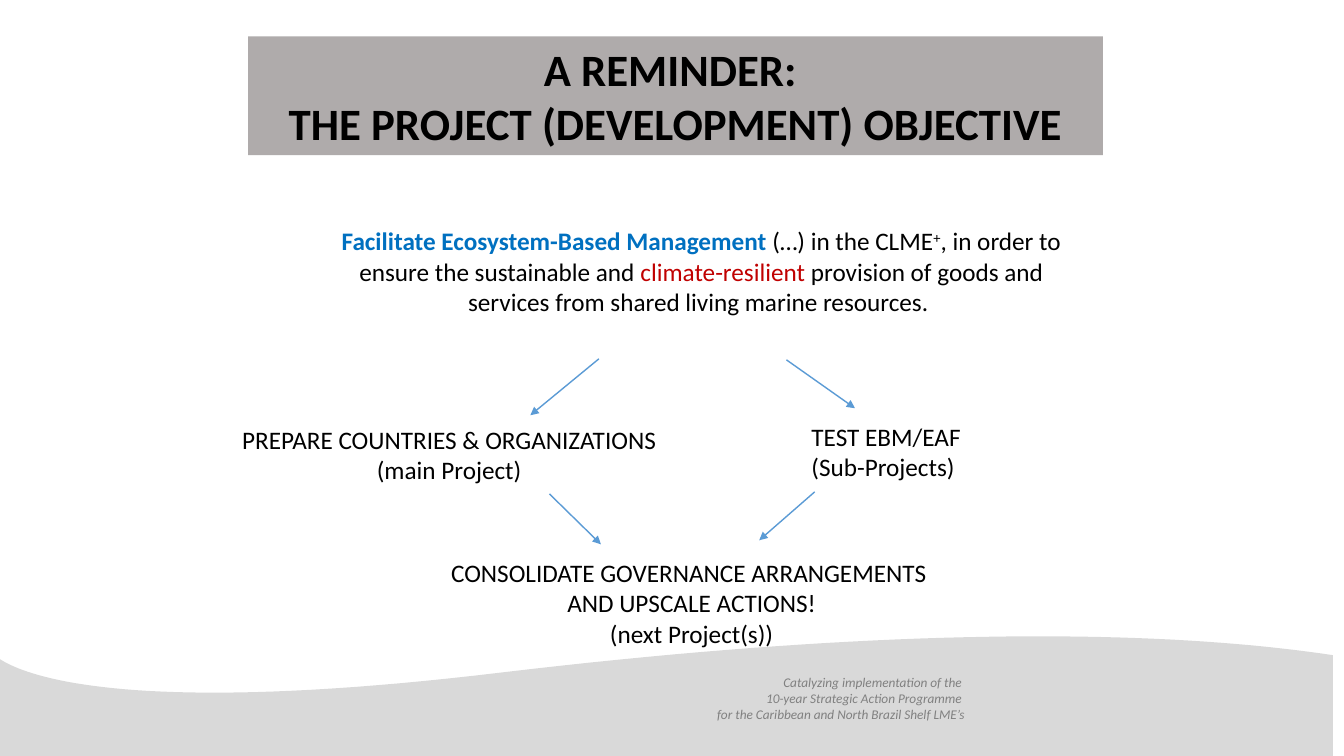
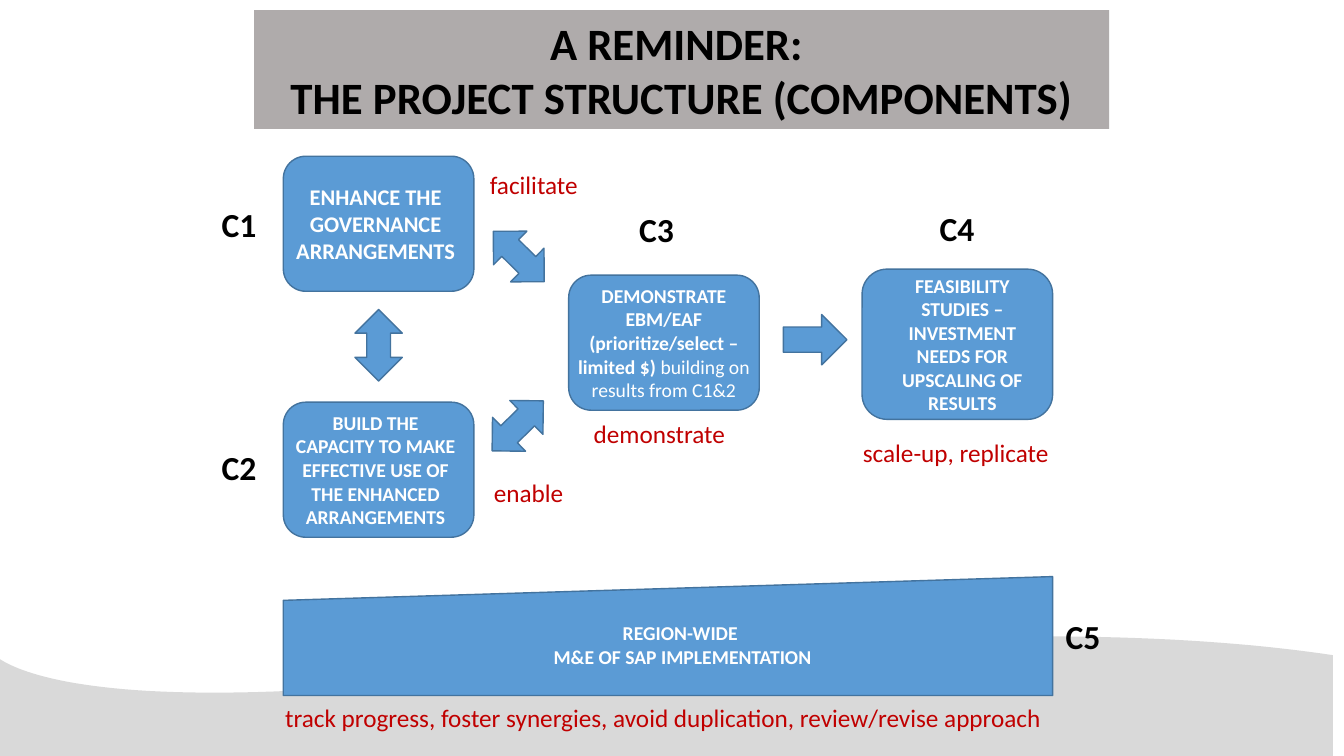
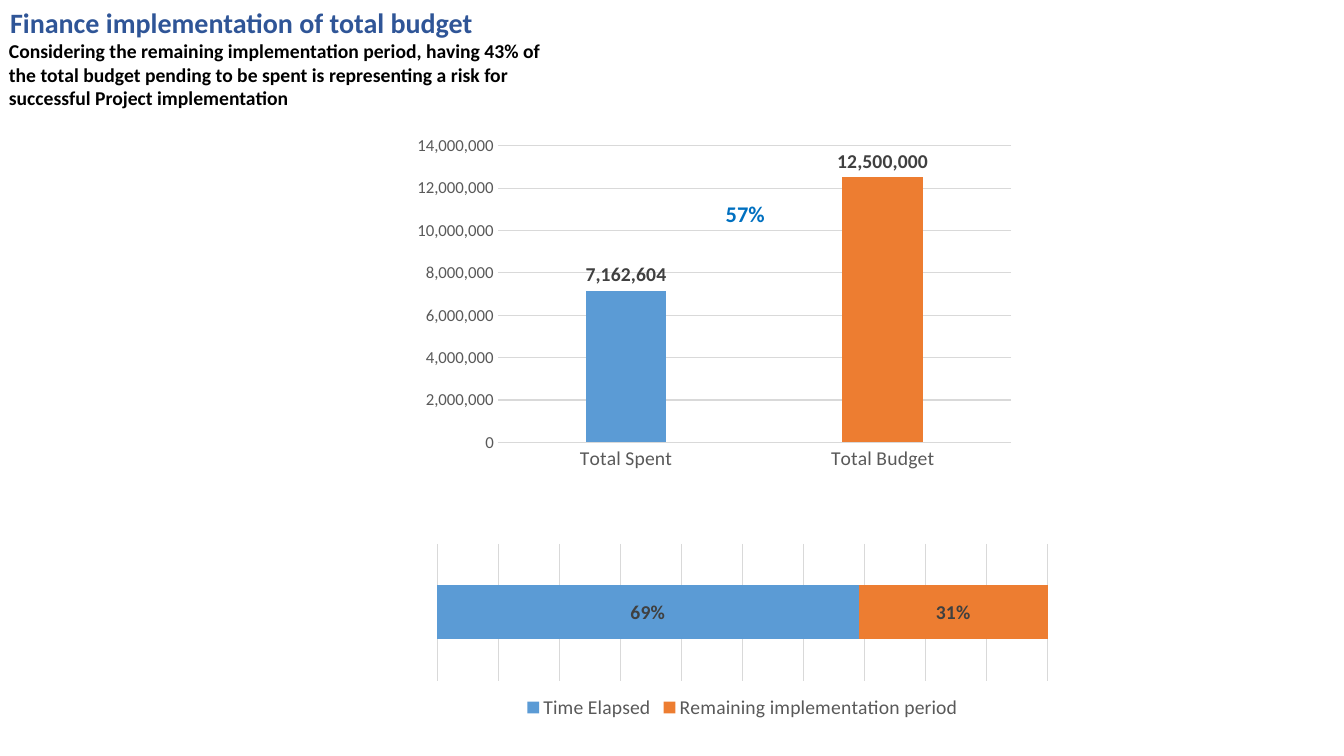
from dataclasses import dataclass

from lxml.etree import SubElement
from pptx import Presentation
from pptx.chart.data import CategoryChartData
from pptx.dml.color import RGBColor
from pptx.enum.chart import XL_CHART_TYPE, XL_LABEL_POSITION, XL_LEGEND_POSITION, XL_TICK_MARK
from pptx.enum.shapes import MSO_CONNECTOR, MSO_SHAPE
from pptx.enum.text import MSO_ANCHOR, MSO_AUTO_SIZE, PP_ALIGN
from pptx.oxml import parse_xml
from pptx.oxml.ns import nsdecls, qn
from pptx.util import Inches, Pt


@dataclass(frozen=True)
class Theme:
    font: str = "Calibri"
    black: str = "000000"
    white: str = "FFFFFF"
    band: str = "AFABAB"
    wave: str = "D9D9D9"
    blue: str = "5B9BD5"
    blue_edge: str = "43739E"
    orange: str = "ED7D31"
    accent: str = "0070C0"
    red: str = "C00000"
    navy: str = "2F5597"
    footer: str = "808080"
    axis: str = "595959"
    value: str = "404040"
    title_size: float = 32
    label_size: float = 24
    heading_size: float = 20
    body_size: float = 18
    large_size: float = 16
    small_size: float = 14
    axis_size: float = 12
    footer_size: float = 9.5


@dataclass(frozen=True)
class Box:
    x: float
    y: float
    w: float
    h: float

    def inner(self, x, y, w, h):
        """Return a box whose corner is measured from this one."""
        return Box(self.x + x, self.y + y, w, h)

    def emu(self):
        return [Inches(v) for v in (self.x, self.y, self.w, self.h)]


T = Theme()
CENTER, RIGHT = PP_ALIGN.CENTER, PP_ALIGN.RIGHT
TOP, MIDDLE = MSO_ANCHOR.TOP, MSO_ANCHOR.MIDDLE


def rgb(color):
    return RGBColor.from_string(color)


def set_font(font, size, color, bold=False, italic=False):
    font.name, font.size, font.bold, font.italic = T.font, Pt(size), bold, italic
    font.color.rgb = rgb(color)


def write(tf, paragraphs, size=T.body_size, color=T.black, bold=False, italic=False,
          align=None, anchor=TOP, wrap=True, insets=(0.1, 0.05, 0.1, 0.05)):
    """Fill a text frame; a paragraph is a string or a list of (text, format) runs."""
    tf.word_wrap, tf.auto_size, tf.vertical_anchor = wrap, MSO_AUTO_SIZE.NONE, anchor
    tf.margin_left, tf.margin_top, tf.margin_right, tf.margin_bottom = map(Inches, insets)
    for i, runs in enumerate(paragraphs):
        p = tf.paragraphs[0] if i == 0 else tf.add_paragraph()
        p.alignment = align
        for text, changes in [(runs, {})] if isinstance(runs, str) else runs:
            r = p.add_run()
            r.text = text
            set_font(r.font, size, changes.get("color", color), changes.get("bold", bold), italic)
            if changes.get("superscript"):
                r.font._element.set("baseline", "30000")


def add_text(slide, box, *paragraphs, **fmt):
    write(slide.shapes.add_textbox(*box.emu()).text_frame, paragraphs, **fmt)


def add_block(slide, kind, box, rotation=0):
    sp = slide.shapes.add_shape(kind, *box.emu())
    sp.shadow.inherit = False
    sp.fill.solid()
    sp.fill.fore_color.rgb = rgb(T.blue)
    sp.line.color.rgb, sp.line.width = rgb(T.blue_edge), Pt(1)
    sp.rotation = rotation
    return sp


def add_arrow(slide, box, start, end):
    ends = [Inches(v) for x, y in (start, end) for v in (box.x + x, box.y + y)]
    sp = slide.shapes.add_connector(MSO_CONNECTOR.STRAIGHT, *ends)
    sp.line.color.rgb, sp.line.width = rgb(T.blue), Pt(1)
    properties = sp._element.spPr
    SubElement(properties.find(qn("a:ln")), qn("a:tailEnd"), type="triangle")
    SubElement(properties, qn("a:effectLst"))


def new_slide(prs, box, *lines, **fmt):
    slide = prs.slides.add_slide(prs.slide_layouts[5])
    title = slide.shapes.title
    title.left, title.top, title.width, title.height = box.emu()
    write(title.text_frame, lines, bold=True, **fmt)
    return slide


def reminder_slide(prs, box, subject):
    """Add a slide with the grey title band and the wave at its foot."""
    slide = new_slide(prs, box, "A REMINDER: ", subject, size=T.title_size,
                      align=CENTER, anchor=MIDDLE)
    fill = slide.shapes.title.fill
    fill.solid()
    fill.fore_color.rgb = rgb(T.band)
    add_wave(slide, Box(0, 6.2, 13.22, 1.3))
    return slide


def bezier(a, b, c, d, steps=40):
    for i in range(1, steps + 1):
        t = i / steps
        u = 1 - t
        yield tuple(u**3 * m + 3 * u * u * t * n + 3 * u * t * t * o + t**3 * q
                    for m, n, o, q in zip(a, b, c, d))


def add_wave(slide, box):
    right, crest, left = (box.w, 0.3), (4.99, 0.47), (0, 0.34)
    points = [(box.w, box.h), right,
              *bezier(right, (11.56, 0.05), (8.95, 0), crest),
              *bezier(crest, (1.34, 0.91), (0.28, 0.52), left), (0, box.h)]
    points = [(Inches(box.x + x), Inches(box.y + y)) for x, y in points]
    builder = slide.shapes.build_freeform(*points[0])
    builder.add_line_segments(points[1:], close=True)
    sp = builder.convert_to_shape()
    sp.shadow.inherit = False
    sp.fill.solid()
    sp.fill.fore_color.rgb = rgb(T.wave)
    sp.line.fill.background()


def objective_flow(slide, box):
    add_text(slide, box.inner(0.85, 0, 7.65, 1.01), [
        ("Facilitate Ecosystem-Based Management ", {"color": T.accent, "bold": True}),
        ("(…) in the CLME", {}),
        ("+", {"superscript": True}),
        (", in order to ensure the sustainable and ", {}),
        ("climate-resilient ", {"color": T.red}),
        ("provision of goods and services from shared living marine resources. ", {}),
    ], align=CENTER)
    add_text(slide, box.inner(0, 1.97, 4.35, 0.71),
             "PREPARE COUNTRIES & ORGANIZATIONS", "(main Project)", align=CENTER)
    add_text(slide, box.inner(5.67, 1.94, 2.47, 0.71), "TEST EBM/EAF", "(Sub-Projects)")
    add_text(slide, box.inner(1.89, 3.29, 5.38, 1.01),
             "CONSOLIDATE GOVERNANCE ARRANGEMENTS ", "AND UPSCALE ACTIONS!",
             "(next Project(s))", align=CENTER)
    for start, end in [((3.66, 1.37), (2.98, 1.93)), ((5.52, 1.38), (6.2, 1.86)),
                       ((3.17, 2.71), (3.68, 3.21)), ((5.8, 2.69), (5.25, 3.17))]:
        add_arrow(slide, box, start, end)


def programme_footer(slide, box):
    add_text(slide, box, "Catalyzing implementation of the ",
             "10-year Strategic Action Programme ",
             "for the Caribbean and North Brazil Shelf LME’s",
             size=T.footer_size, color=T.footer, italic=True, align=RIGHT)


def component_map(slide, box):
    rounded, w, h = MSO_SHAPE.ROUNDED_RECTANGLE, 1.89, 1.34
    side_insets = (0.04, 0, 0.1, 0)
    components = [
        ("C1", (0, 0.42), rounded, (0.71, 0, w, h), side_insets, T.large_size,
         ["ENHANCE THE GOVERNANCE ARRANGEMENTS"]),
        ("C2", (0, 2.83), rounded, (0.71, 2.44, w, h), side_insets, T.small_size,
         ["BUILD THE CAPACITY TO MAKE EFFECTIVE USE OF THE ENHANCED ARRANGEMENTS"]),
        ("C3", (4.14, 0.47), rounded, (3.54, 1.18, w, h), (0, 0, 0, 0), T.small_size,
         ["DEMONSTRATE EBM/EAF",
          [("(prioritize/select – limited $) ", {}),
           ("building on results from C1&2", {"bold": False})]]),
        ("C4", (7.12, 0.46), rounded, (6.45, 1.12, w, 1.49), (0.12, 0, 0.02, 0), T.small_size,
         ["FEASIBILITY STUDIES – INVESTMENT NEEDS FOR UPSCALING OF RESULTS"]),
        ("C5", (8.37, 4.51), MSO_SHAPE.FLOWCHART_MANUAL_INPUT, (0.71, 4.17, 7.63, 1.18),
         (0.29, 0, 0, 0.07), T.small_size, ["REGION-WIDE ", "M&E OF SAP IMPLEMENTATION"]),
    ]
    for label, spot, kind, place, insets, size, lines in components:
        sp = add_block(slide, kind, box.inner(*place))
        write(sp.text_frame, lines, size=size, color=T.white, bold=True,
              align=CENTER, anchor=MIDDLE, insets=insets)
        add_text(slide, box.inner(*spot, 0.55, 0.5), label,
                 size=T.label_size, bold=True, wrap=False)

    for x, y, angle in [(1.3, 1.64, 90), (2.69, 0.76, 44.8), (2.68, 2.44, 315.7)]:
        add_block(slide, MSO_SHAPE.LEFT_RIGHT_ARROW, box.inner(x, y, 0.71, 0.47), angle)
    add_block(slide, MSO_SHAPE.RIGHT_ARROW, box.inner(5.67, 1.57, 0.63, 0.5))

    for x, y, width, caption in [
        (2.66, 0.08, 1.1, "facilitate"),
        (2.7, 3.14, 0.94, "enable"),
        (3.69, 2.55, 1.55, "demonstrate"),
        (6.36, 2.74, 2.13, "scale-up, replicate"),
        (0.63, 5.37, 7.74,
         "track progress, foster synergies, avoid duplication, review/revise approach"),
    ]:
        add_text(slide, box.inner(x, y, width, 0.4), caption, color=T.red, wrap=False)


def add_bars(slide, box, kind, categories, series, gap, number_format, label_position):
    """Add a bar chart with value labels and light gridlines."""
    data = CategoryChartData(number_format=number_format)
    data.categories = categories
    for name, values in series:
        data.add_series(name, values)
    chart = slide.shapes.add_chart(kind, *box.emu(), data).chart
    set_font(chart.font, 10, T.black)
    chart.has_title = chart.has_legend = False
    plot = chart.plots[0]
    plot.gap_width, plot.vary_by_categories = gap, False
    for s, color in zip(plot.series, (T.blue, T.orange)):
        s.format.fill.solid()
        s.format.fill.fore_color.rgb = rgb(color)
        labels = s.data_labels
        labels.show_value, labels.position = True, label_position
        labels.number_format, labels.number_format_is_linked = number_format, False
        set_font(labels.font, T.small_size, T.value, bold=True)
    axis = chart.value_axis
    axis.has_major_gridlines = True
    grid = axis.major_gridlines.format.line
    grid.color.rgb, grid.width = rgb(T.wave), Pt(0.75)
    axis.minimum_scale = 0
    axis.tick_labels.number_format = number_format
    axis.tick_labels.number_format_is_linked = False
    return chart


def budget_chart(slide, box):
    chart = add_bars(slide, box, XL_CHART_TYPE.COLUMN_CLUSTERED,
                     ["Total Spent", "Total Budget"], [("Series 1", (7162604, 12500000))],
                     219, "#,##0", XL_LABEL_POSITION.OUTSIDE_END)
    budget = chart.plots[0].series[0].points[1].format.fill
    budget.solid()
    budget.fore_color.rgb = rgb(T.orange)
    values, names = chart.value_axis, chart.category_axis
    values.maximum_scale, values.major_unit = 14000000, 2000000
    for axis, size in ((values, T.axis_size), (names, T.small_size)):
        axis.major_tick_mark = axis.minor_tick_mark = XL_TICK_MARK.NONE
        set_font(axis.tick_labels.font, size, T.axis)
    values.format.line.fill.background()
    names.format.line.color.rgb, names.format.line.width = rgb(T.wave), Pt(0.75)

    plot_area = chart._chartSpace.chart.plotArea
    for old in plot_area.findall(qn("c:layout")):
        plot_area.remove(old)
    settings = [("layoutTarget", "inner"), ("xMode", "edge"), ("yMode", "edge"),
                ("x", 0.19), ("y", 0.06), ("w", 0.74), ("h", 0.72)]
    tags = "".join(f'<c:{tag} val="{val}"/>' for tag, val in settings)
    plot_area.insert(0, parse_xml(
        f'<c:layout {nsdecls("c")}><c:manualLayout>{tags}</c:manualLayout></c:layout>'))
    add_text(slide, box.inner(3.47, 0.74, 1.03, 0.37), "57%",
             size=T.large_size, color=T.accent, bold=True)


def time_chart(slide, box):
    chart = add_bars(slide, box, XL_CHART_TYPE.BAR_STACKED_100, ["1"],
                     [("Time Elapsed", (0.69,)), ("Remaining implementation period", (0.31,))],
                     150, "0%", XL_LABEL_POSITION.CENTER)
    chart.plots[0].overlap = 100
    chart.value_axis.maximum_scale, chart.value_axis.major_unit = 1, 0.1
    chart.value_axis.visible = chart.category_axis.visible = False
    chart.has_legend = True
    chart.legend.position = XL_LEGEND_POSITION.BOTTOM
    chart.legend.include_in_layout = False
    set_font(chart.legend.font, T.small_size, T.axis)


def main():
    prs = Presentation()
    prs.slide_width, prs.slide_height = Inches(13.33), Inches(7.5)

    slide = reminder_slide(prs, Box(2.46, 0.36, 8.48, 1.18),
                           "THE PROJECT (DEVELOPMENT) OBJECTIVE")
    programme_footer(slide, Box(5.76, 6.64, 3.91, 0.58))
    objective_flow(slide, Box(2.28, 2.19, 8.5, 4.3))

    slide = reminder_slide(prs, Box(2.52, 0.1, 8.48, 1.18),
                           "THE PROJECT STRUCTURE (COMPONENTS)")
    component_map(slide, Box(2.1, 1.55, 8.92, 5.77))

    slide = new_slide(prs, Box(0, 0, 7.36, 0.58), "Finance implementation of total budget",
                      size=T.heading_size, color=T.navy, align=PP_ALIGN.LEFT)
    add_text(slide, Box(-0.01, 0.34, 5.66, 0.8),
             "Considering the remaining implementation period, having 43% of the total budget "
             "pending to be spent is representing a risk for successful Project implementation",
             size=T.small_size, bold=True)
    budget_chart(slide, Box(3.63, 1.2, 6.88, 4.09))
    time_chart(slide, Box(4.21, 5.36, 6.31, 1.82))

    prs.save("out.pptx")


if __name__ == "__main__":
    main()
